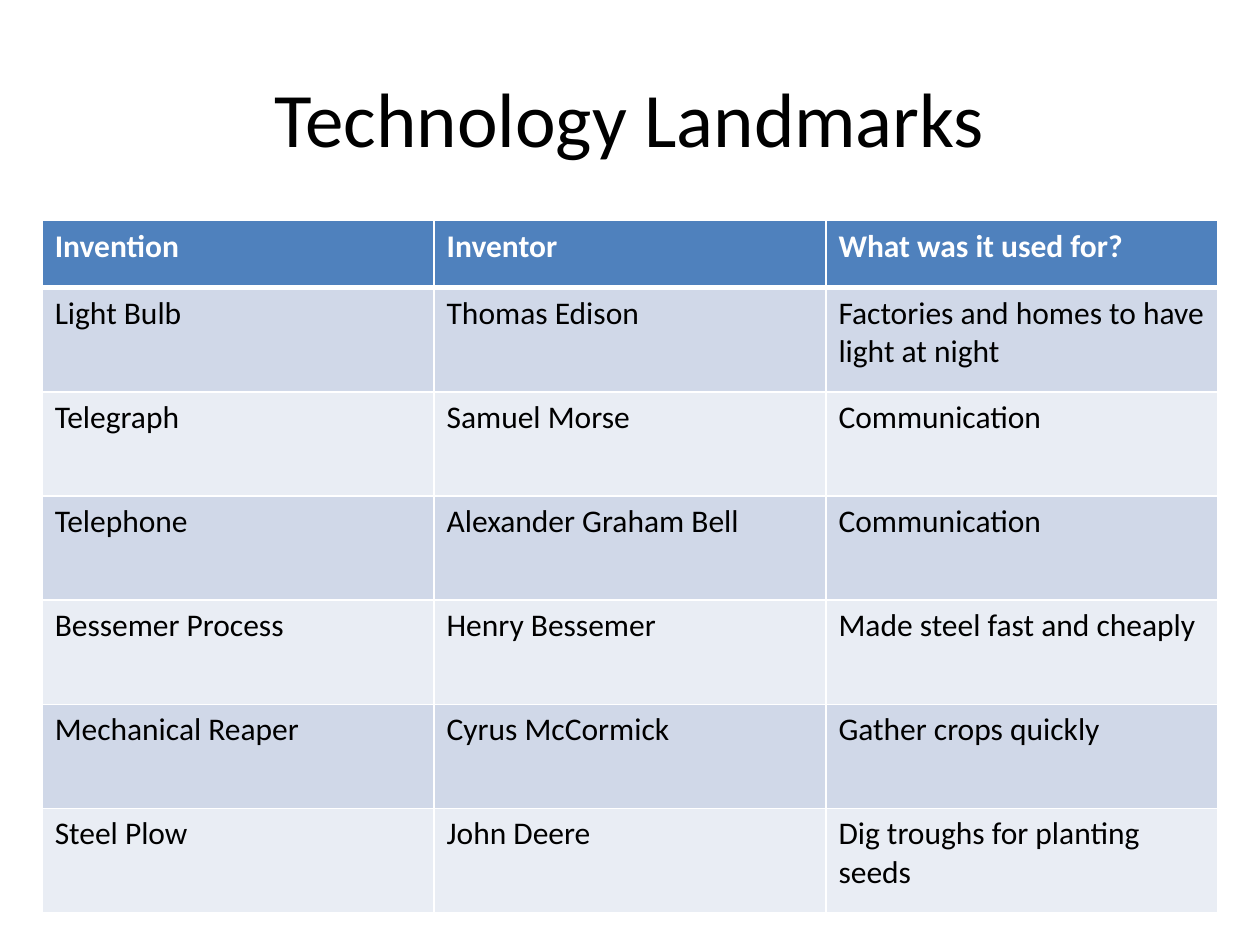
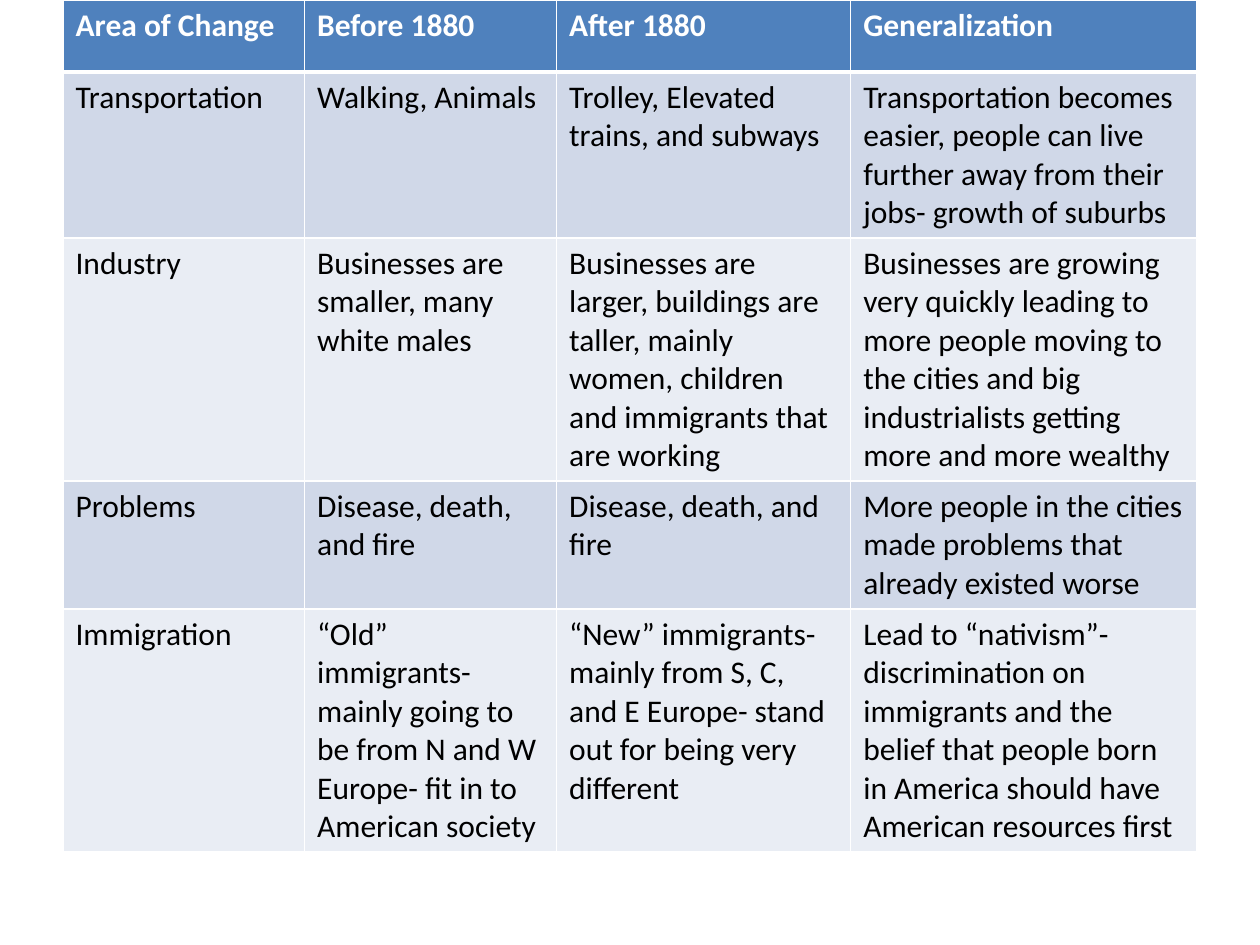
from lxml import etree
from pptx import Presentation
from pptx.dml.color import RGBColor
from pptx.enum.text import MSO_ANCHOR, PP_ALIGN
from pptx.oxml.ns import qn
from pptx.util import Cm, Pt

LEFT, CENTER = PP_ALIGN.LEFT, PP_ALIGN.CENTER
MIDDLE = MSO_ANCHOR.MIDDLE

BLACK = RGBColor(0x00, 0x00, 0x00)
WHITE = RGBColor(0xFF, 0xFF, 0xFF)
HEADER_BLUE = RGBColor(0x4F, 0x81, 0xBD)
BAND_DARK = RGBColor(0xD0, 0xD8, 0xE8)
BAND_LIGHT = RGBColor(0xE9, 0xED, 0xF4)

LANDMARKS = [
    ("Invention", "Inventor", "What was it used for?"),
    ("Light Bulb", "Thomas Edison", "Factories and homes to have light at night"),
    ("Telegraph", "Samuel Morse", "Communication"),
    ("Telephone", "Alexander Graham Bell", "Communication"),
    ("Bessemer Process", "Henry Bessemer", "Made steel fast and cheaply"),
    ("Mechanical Reaper", "Cyrus McCormick", "Gather crops quickly"),
    ("Steel Plow", "John Deere", "Dig troughs for planting seeds"),
]

CHANGES = [
    ("Area of Change", "Before 1880", "After 1880", "Generalization"),
    ("Transportation", "Walking, Animals",
     "Trolley, Elevated trains, and subways",
     "Transportation becomes easier, people can live further away from their "
     "jobs- growth of suburbs"),
    ("Industry", "Businesses are smaller, many white males",
     "Businesses are larger, buildings are taller, mainly women, children and "
     "immigrants that are working",
     "Businesses are growing very quickly leading to more people moving to the "
     "cities and big industrialists getting more and more wealthy"),
    ("Problems", "Disease, death, and fire", "Disease, death, and fire",
     "More people in the cities made problems that already existed worse"),
    ("Immigration",
     "“Old” immigrants- mainly going to be from N and W Europe- fit in to "
     "American society",
     "“New” immigrants- mainly from S, C, and E Europe- stand out for being "
     "very different",
     "Lead to “nativism”- discrimination on immigrants and the belief that "
     "people born in America should have American resources first"),
]


def write(tf, text, size=18, color=BLACK, bold=False, align=LEFT, font="Calibri"):
    p = tf.paragraphs[0]
    p.alignment = align
    r = p.add_run()
    r.text = text
    r.font.name = font
    r.font.size = Pt(size)
    r.font.bold = bold
    r.font.color.rgb = color


def set_borders(cell, top=1, bottom=1, color=WHITE):
    """Draw all four cell borders; the widths are in points."""
    tcPr = cell._tc.get_or_add_tcPr()
    widths = {"a:lnL": 1, "a:lnR": 1, "a:lnT": top, "a:lnB": bottom}
    # The schema wants the borders ahead of the fill.
    for i, (tag, width) in enumerate(widths.items()):
        ln = etree.Element(qn(tag), w=str(Pt(width)))
        fill = etree.SubElement(ln, qn("a:solidFill"))
        etree.SubElement(fill, qn("a:srgbClr"), val=str(color))
        tcPr.insert(i, ln)


class Deck:
    """Holds the presentation, its style and the current slide."""

    def __init__(self):
        self.prs = Presentation()
        self.prs.slide_width = Cm(25.4)
        self.prs.slide_height = Cm(19.05)
        self.s = None

    def new_slide(self):
        self.s = self.prs.slides.add_slide(self.prs.slide_layouts[6])

    def title(self, text):
        sp = self.s.shapes.add_textbox(Cm(1.27), Cm(0.76), Cm(22.86), Cm(3.18))
        tf = sp.text_frame
        tf.word_wrap = True
        tf.vertical_anchor = MIDDLE
        write(tf, text, size=44, align=CENTER)

    def table(self, rows, left, top, widths, heights):
        """Add a banded table with a header row; lengths are in centimetres."""
        tbl = self.s.shapes.add_table(
            len(rows), len(widths), Cm(left), Cm(top),
            Cm(sum(widths)), Cm(sum(heights))).table
        for col, width in zip(tbl.columns, widths):
            col.width = Cm(width)
        for i, (row, height) in enumerate(zip(rows, heights)):
            tbl.rows[i].height = Cm(height)
            header = i == 0
            band = BAND_DARK if i % 2 else BAND_LIGHT
            for j, text in enumerate(row):
                cell = tbl.cell(i, j)
                cell.fill.solid()
                cell.fill.fore_color.rgb = HEADER_BLUE if header else band
                set_borders(cell, top=3 if i == 1 else 1, bottom=3 if header else 1)
                write(cell.text_frame, text, bold=header,
                      color=WHITE if header else BLACK)


def main():
    deck = Deck()

    deck.new_slide()
    deck.title("Technology Landmarks")
    deck.table(LANDMARKS, 0.85, 4.45, widths=[7.9] * 3, heights=[1.35] + [2.1] * 6)

    deck.new_slide()
    deck.table(CHANGES, 1.27, 0, widths=[4.87, 5.08, 5.93, 6.98],
               heights=[1.45, 3.35, 4.9, 2.58, 4.9])

    deck.prs.save("out.pptx")


if __name__ == "__main__":
    main()
